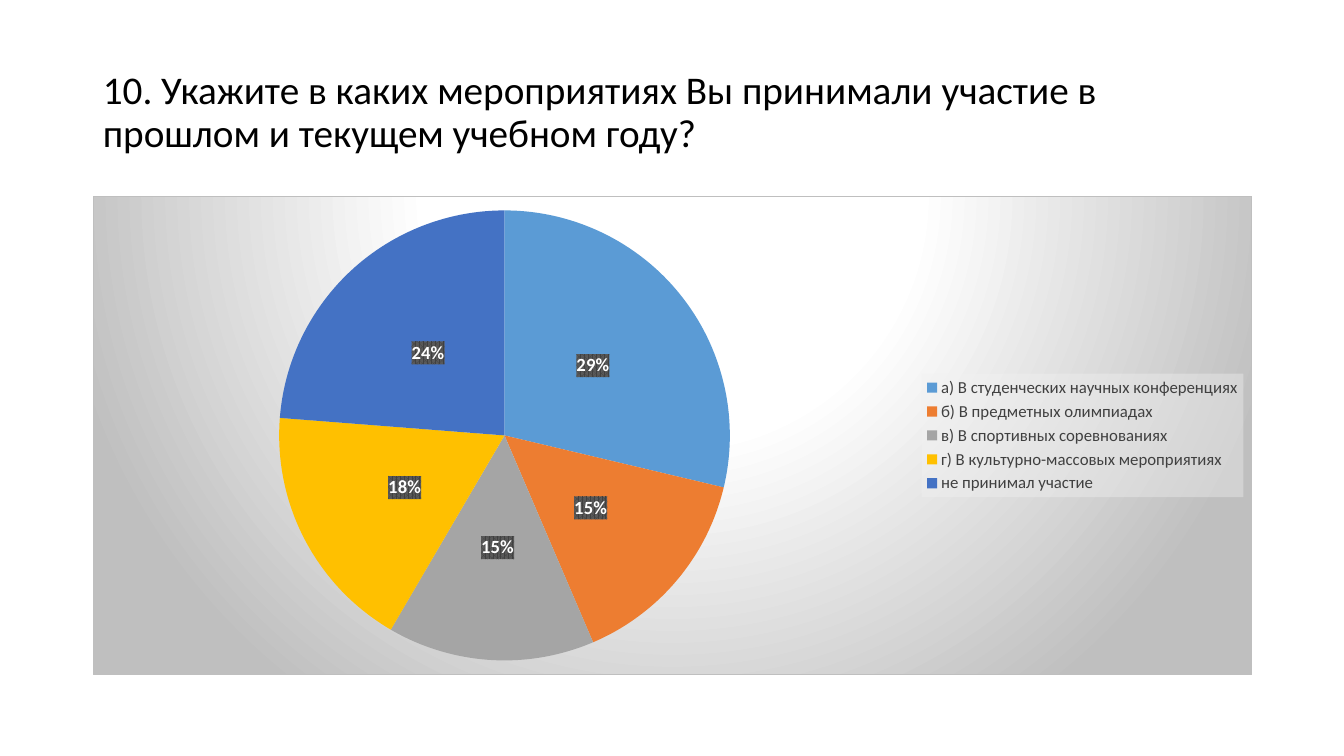
from dataclasses import dataclass

from lxml.etree import fromstring
from pptx import Presentation
from pptx.chart.data import CategoryChartData as ChartData
from pptx.dml.color import RGBColor as RGB
from pptx.enum.chart import XL_CHART_TYPE as Kind
from pptx.enum.chart import XL_LABEL_POSITION as LabelPos
from pptx.enum.chart import XL_LEGEND_POSITION as LegendPos
from pptx.enum.text import MSO_ANCHOR as Anchor
from pptx.enum.text import PP_ALIGN as Align
from pptx.oxml.ns import nsdecls, qn
from pptx.util import Inches, Pt


@dataclass(frozen=True)
class Theme:
    """Colours and type sizes of the slide."""
    font: str = "Calibri"
    ink: str = "000000"
    soft: str = "404040"
    light: str = "FFFFFF"
    edge: str = "BFBFBF"
    mist: str = "F2F2F2"
    dim: str = "595959"
    slices: tuple = ("5B9BD5", "ED7D31", "A5A5A5", "FFC000", "4472C4")
    title: float = 28
    base: float = 10
    key: float = 12
    label: float = 13.3


THEME = Theme()
TITLE = "10. Укажите в каких мероприятиях Вы принимали участие в прошлом и текущем учебном году?"
SHARES = {
    "а) В студенческих научных конференциях": 29,
    "б) В предметных олимпиадах": 15,
    "в) В спортивных соревнованиях": 15,
    "г) В культурно-массовых мероприятиях": 18,
    "не принимал участие": 24,
}


def style(font, size, color, bold=False):
    """Set the face, size, colour and weight of a font."""
    font.name, font.size, font.bold = THEME.font, Pt(size), bold
    font.color.rgb = RGB.from_string(color)


def tint(color, inner=""):
    """Return the XML of one colour."""
    return f'<a:srgbClr val="{color}">{inner}</a:srgbClr>'


def paint(owner, body):
    """Give a chart part a fill and line ahead of its text properties."""
    part = fromstring(f'<c:spPr {nsdecls("c", "a")}>{body}</c:spPr>')
    owner.find(qn("c:txPr")).addprevious(part)


def place(chart, x, y, w, h):
    """Fix the inner plot area as fractions of the chart."""
    sides = "".join(f'<c:{k} val="{v}"/>' for k, v in zip("xywh", (x, y, w, h)))
    layout = fromstring(
        f'<c:layout {nsdecls("c")}><c:manualLayout><c:layoutTarget val="inner"/>'
        f'<c:xMode val="edge"/><c:yMode val="edge"/>{sides}'
        '</c:manualLayout></c:layout>')
    area = chart.element.find(".//" + qn("c:plotArea"))
    for old in area.findall(qn("c:layout")):
        area.remove(old)
    area.insert(0, layout)


def add_title(slide, box):
    """Write the question into the title placeholder."""
    title = slide.shapes.title
    title.left, title.top, title.width, title.height = map(Inches, box)
    frame = title.text_frame
    frame.text = TITLE
    frame.word_wrap = True
    frame.vertical_anchor = Anchor.MIDDLE
    para = frame.paragraphs[0]
    para.line_spacing = 0.9
    para.alignment = Align.LEFT
    style(para.runs[0].font, THEME.title, THEME.ink)


def add_backdrop(chart):
    """Paint the radial gradient and the border of the chart."""
    stops = "".join(
        f'<a:gs pos="{pos * 1000}">{tint(color)}</a:gs>'
        for pos, color in ((0, THEME.light), (39, THEME.light), (100, THEME.edge)))
    paint(chart.element,
          f'<a:gradFill><a:gsLst>{stops}</a:gsLst><a:path path="circle">'
          '<a:fillToRect l="50000" t="-80000" r="50000" b="180000"/>'
          f'</a:path></a:gradFill><a:ln w="{Pt(0.75)}"><a:solidFill>'
          f'{tint(THEME.edge)}</a:solidFill></a:ln>')


def add_labels(plot):
    """Show percentages on dark patterned tags."""
    plot.has_data_labels = True
    labels = plot.data_labels
    labels.show_percentage, labels.show_value = True, False
    labels.number_format, labels.number_format_is_linked = "0%", False
    labels.position = LabelPos.CENTER
    style(labels.font, THEME.label, THEME.light, True)
    paint(plot.series[0]._element.getparent().find(qn("c:dLbls")),
          f'<a:pattFill prst="pct75"><a:fgClr>{tint(THEME.soft)}</a:fgClr>'
          f'<a:bgClr>{tint(THEME.dim)}</a:bgClr></a:pattFill>')


def add_key(chart):
    """Place the legend on a translucent panel at the right."""
    chart.has_legend = True
    key = chart.legend
    key.position, key.include_in_layout = LegendPos.RIGHT, False
    style(key.font, THEME.key, THEME.soft)
    panel = tint(THEME.mist, '<a:alpha val="39000"/>')
    paint(chart.element.find(".//" + qn("c:legend")),
          f'<a:solidFill>{panel}</a:solidFill>')


def add_pie(slide, box):
    """Draw the pie of answers in the given box."""
    data = ChartData(number_format="0")
    data.categories = list(SHARES)
    data.add_series("Series 1", list(SHARES.values()))
    chart = slide.shapes.add_chart(Kind.PIE, *map(Inches, box), data).chart
    chart.has_title = False
    style(chart.font, THEME.base, THEME.ink)
    plot = chart.plots[0]
    plot.vary_by_categories = True
    for i, color in enumerate(THEME.slices):
        fill = plot.series[0].points[i].format.fill
        fill.solid()
        fill.fore_color.rgb = RGB.from_string(color)
    place(chart, 0.16, 0.03, 0.39, 0.94)
    add_backdrop(chart)
    add_labels(plot)
    add_key(chart)


def main():
    """Build and save the slide."""
    deck = Presentation()
    deck.slide_width, deck.slide_height = Inches(13.33), Inches(7.5)
    slide = deck.slides.add_slide(deck.slide_layouts[5])
    add_title(slide, (0.92, 0.4, 11.5, 1.45))
    add_pie(slide, (0.92, 1.94, 11.5, 4.76))
    deck.save("out.pptx")


if __name__ == "__main__":
    main()
